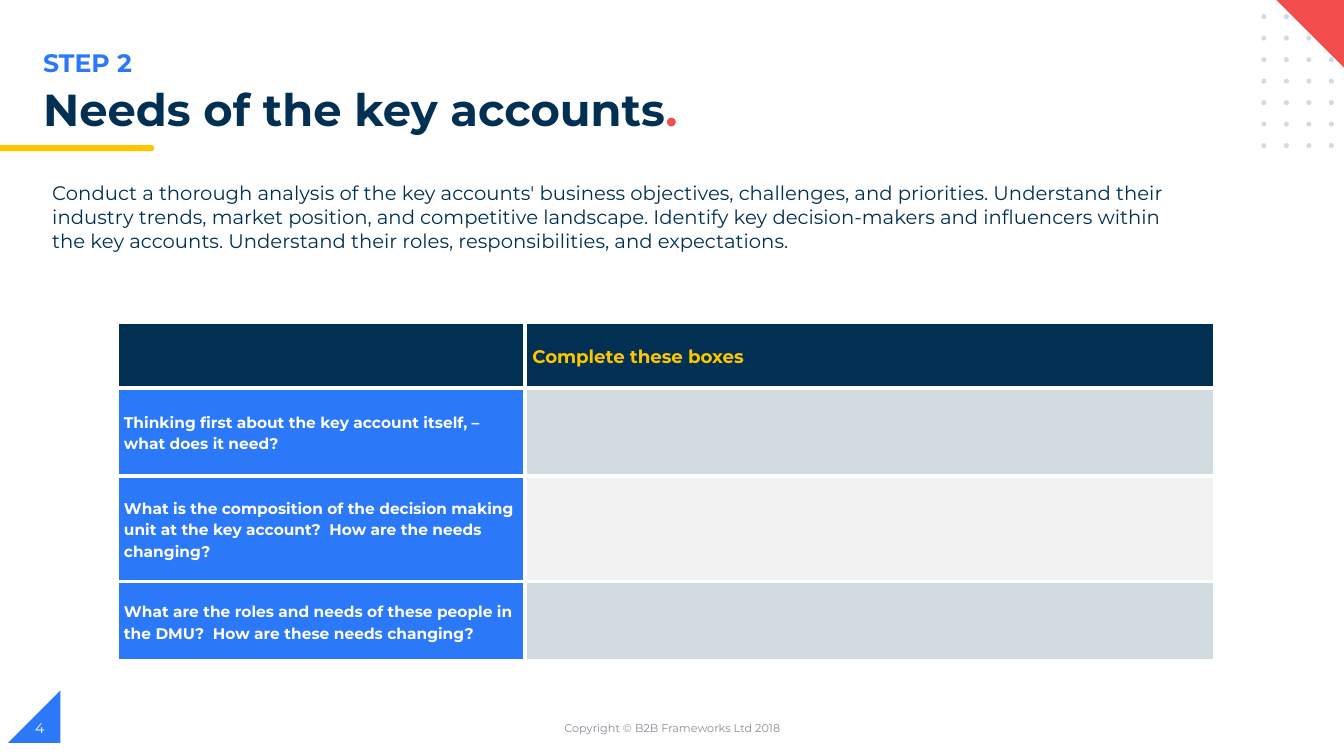
from pptx import Presentation
from pptx.dml.color import RGBColor
from pptx.enum.shapes import MSO_SHAPE
from pptx.enum.text import MSO_ANCHOR, PP_ALIGN
from pptx.oxml import parse_xml
from pptx.oxml.ns import nsdecls
from pptx.util import Inches, Pt

NAVY = RGBColor(0x02, 0x30, 0x53)
BLUE = RGBColor(0x2B, 0x79, 0xF8)
YELLOW = RGBColor(0xFF, 0xC6, 0x00)
RED = RGBColor(0xF2, 0x4E, 0x4E)
MIST = RGBColor(0xD1, 0xDB, 0xE0)
PALE = RGBColor(0xF2, 0xF2, 0xF2)
GREY = RGBColor(0x88, 0x8C, 0x97)
WHITE = RGBColor(0xFF, 0xFF, 0xFF)

RECTANGLE = MSO_SHAPE.RECTANGLE
TERMINATOR = MSO_SHAPE.FLOWCHART_TERMINATOR
TRIANGLE = MSO_SHAPE.RIGHT_TRIANGLE
OVAL = MSO_SHAPE.OVAL
TOP, MIDDLE = MSO_ANCHOR.TOP, MSO_ANCHOR.MIDDLE
LEFT, CENTER = PP_ALIGN.LEFT, PP_ALIGN.CENTER

presentation = Presentation()
presentation.slide_width = Inches(13.33)
presentation.slide_height = Inches(7.5)
slide = presentation.slides.add_slide(presentation.slide_layouts[6])


def add_decoration(kind, left, top, width, height, color, rotation=0):
    shape = slide.shapes.add_shape(
        kind, Inches(left), Inches(top), Inches(width), Inches(height))
    shape.shadow.inherit = False
    shape.fill.solid()
    shape.fill.fore_color.rgb = color
    shape.line.fill.background()
    shape.rotation = rotation


def write_runs(paragraph, runs, size, bold=False, line_spacing=1.0):
    """Write (text, color) runs in one size and weight."""
    paragraph.line_spacing = line_spacing
    font_format = {"name": "Montserrat", "size": Pt(size), "bold": bold}
    for text, color in runs:
        run = paragraph.add_run()
        run.text = text
        for attribute, value in font_format.items():
            setattr(run.font, attribute, value)
        run.font.color.rgb = color


# Page corner, title underline, dot grid and top corner
add_decoration(TRIANGLE, 0.08, 6.85, 0.52, 0.52, BLUE, rotation=270)
add_decoration(TERMINATOR, 1.34, 1.44, 0.19, 0.06, YELLOW)
add_decoration(RECTANGLE, 0, 1.44, 1.41, 0.06, YELLOW)
for row in range(7):
    for column in range(4):
        add_decoration(OVAL, 12.51 + column * 0.67 / 3, 0.14 + row * 1.28 / 6,
                       0.05, 0.05, MIST)
add_decoration(TRIANGLE, 12.65, -0.01, 0.72, 0.72, RED, rotation=180)

# Text boxes: position, anchor, alignment, runs, size, bold, line spacing
INTRODUCTION = (
    "Conduct a thorough analysis of the key accounts' business objectives, "
    "challenges, and priorities. Understand their industry trends, market "
    "position, and competitive landscape. Identify key decision-makers and "
    "influencers within the key accounts. Understand their roles, "
    "responsibilities, and expectations.")
text_boxes = [
    ((0.33, 0.42, 6.69, 0.4), TOP, LEFT, [("STEP 2", BLUE)], 18, True, 1.0),
    ((0.33, 0.82, 11.15, 0.56), TOP, LEFT,
     [("Needs of the key accounts", NAVY), (".", RED)], 32, True, 0.9),
    ((0.42, 1.75, 11.44, 0.81), TOP, LEFT, [(INTRODUCTION, NAVY)], 14, False, 1.0),
    ((4.42, 7.02, 4.5, 0.4), MIDDLE, CENTER,
     [("Copyright © B2B Frameworks Ltd 2018", GREY)], 8, False, 1.0),
    ((0.25, 7.02, 3, 0.4), MIDDLE, LEFT, [("4", WHITE)], 10, False, 1.0),
]
for position, anchor, alignment, runs, size, bold, line_spacing in text_boxes:
    text_frame = slide.shapes.add_textbox(*map(Inches, position)).text_frame
    text_frame.word_wrap = True
    text_frame.vertical_anchor = anchor
    text_frame.paragraphs[0].alignment = alignment
    write_runs(text_frame.paragraphs[0], runs, size, bold, line_spacing)

# Needs table: height, then (text, color, size, fill) for each cell
needs_rows = [
    (0.65, [("", WHITE, 11, NAVY), ("Complete these boxes", YELLOW, 13, NAVY)]),
    (0.87, [("Thinking first about the key account itself, – what does it need?",
             WHITE, 11, BLUE), ("", NAVY, 11, MIST)]),
    (1.05, [("What is the composition of the decision making unit at the key "
             "account?  How are the needs changing?", WHITE, 11, BLUE),
            ("", NAVY, 11, PALE)]),
    (0.79, [("What are the roles and needs of these people in the DMU?  How are "
             "these needs changing?", WHITE, 11, BLUE), ("", NAVY, 11, MIST)]),
]
column_widths = [4.05, 6.84]
cell_format = {
    "margin_left": Inches(0.07), "margin_right": Inches(0.07),
    "margin_top": 0, "margin_bottom": 0, "vertical_anchor": MIDDLE,
}
table = slide.shapes.add_table(
    len(needs_rows), len(column_widths), Inches(1.16), Inches(3.2),
    Inches(sum(column_widths)),
    Inches(sum(height for height, _ in needs_rows))).table
for column, width in zip(table.columns, column_widths):
    column.width = Inches(width)
for table_row, (height, cells) in zip(table.rows, needs_rows):
    table_row.height = Inches(height)
    for cell, (text, color, size, fill) in zip(table_row.cells, cells):
        for attribute, value in cell_format.items():
            setattr(cell, attribute, value)
        for side in ("lnL", "lnR", "lnT", "lnB"):
            cell._tc.get_or_add_tcPr().append(parse_xml(
                f'<a:{side} {nsdecls("a")} w="{Pt(3)}"><a:solidFill>'
                f'<a:srgbClr val="{WHITE}"/></a:solidFill></a:{side}>'))
        cell.fill.solid()
        cell.fill.fore_color.rgb = fill
        if text:
            write_runs(cell.text_frame.paragraphs[0], [(text, color)], size,
                       bold=True, line_spacing=1.15)

presentation.save("out.pptx")
